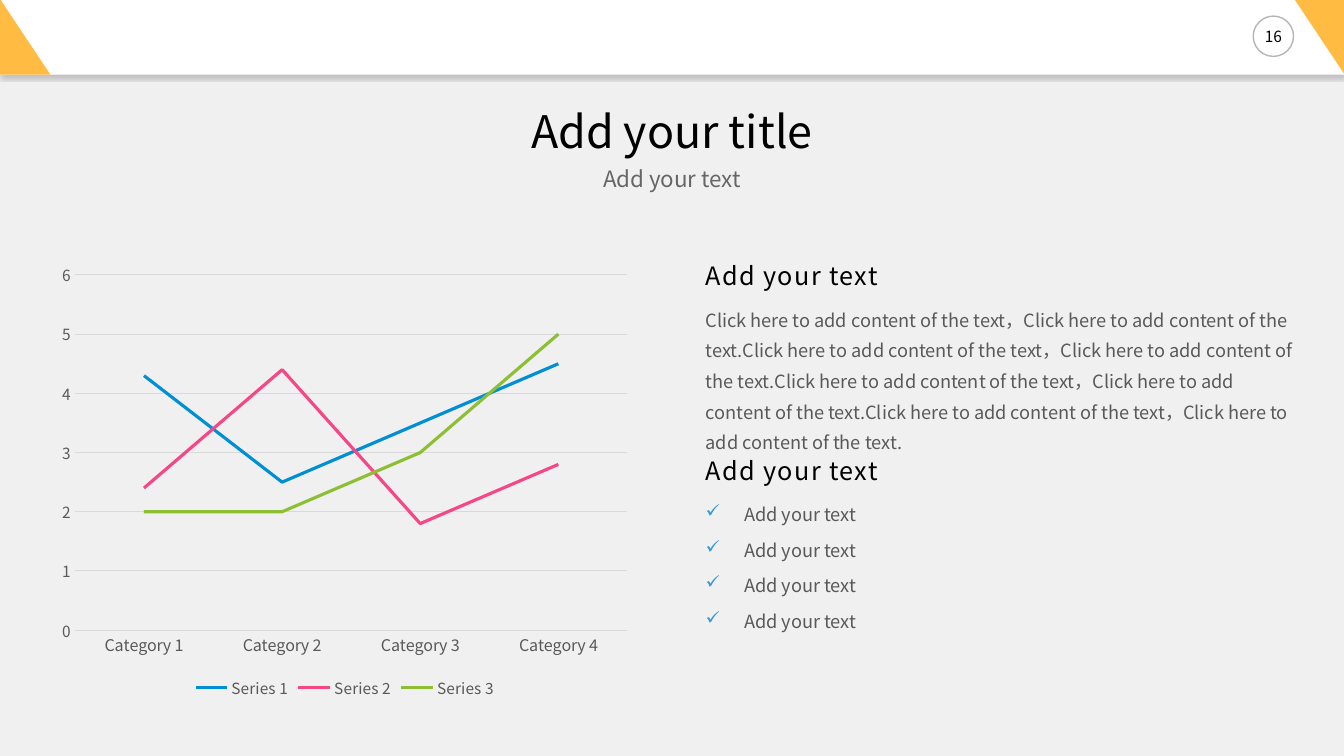
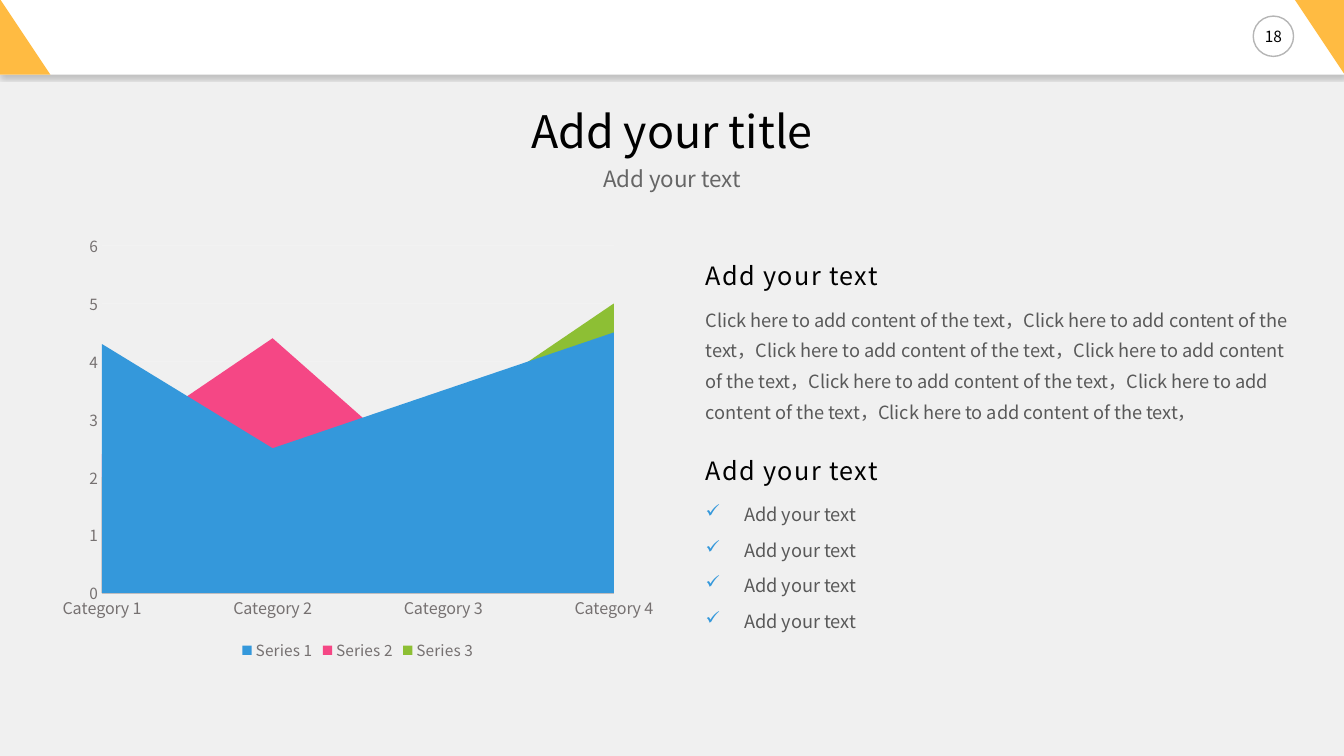
from lxml import etree
from pptx import Presentation
from pptx import util as u
from pptx.chart.data import CategoryChartData
from pptx.dml.color import RGBColor
from pptx.enum import chart as charts, shapes, text
from pptx.oxml import parse_xml
from pptx.oxml.ns import qn

# Content
CATEGORIES = ["Category 1", "Category 2", "Category 3", "Category 4"]
SERIES = [
    ("Series 1", (4.3, 2.5, 3.5, 4.5)),
    ("Series 2", (2.4, 4.4, 1.8, 2.8)),
    ("Series 3", (2, 2, 3, 5)),
]
TITLE = "Add your title"
PLACEHOLDER = "Add your text"
BULLETS = [PLACEHOLDER] * 4
SENTENCE = "Click here to add content of the text"
SLIDES = [
    {
        "number": "16", "kind": charts.XL_CHART_TYPE.LINE,
        "box": (0.5, 2.53, 5.84, 4.44),
        "colors": ("blue_line", "pink", "green"), "label": "body", "grid": "rule",
        "body": f"{SENTENCE}，{SENTENCE}." * 4,
    },
    {
        "number": "18", "kind": charts.XL_CHART_TYPE.AREA,
        "box": (0.5, 2.24, 6.1, 4.36),
        "colors": ("blue", "pink", "green"), "label": "chart_gray", "grid": "faint_rule",
        "body": f"{SENTENCE}，" * 7,
    },
]

# Shared style
COLORS = {
    "background": "F0F0F0", "white": "FFFFFF", "black": "000000", "accent": "FFBB42",
    "ring": "0D0D0D", "body": "595959", "subtitle": "666666", "chart_gray": "767171",
    "rule": "D9D9D9", "faint_rule": "F2F2F2", "blue": "3498DB", "blue_line": "008FD5",
    "pink": "F54785", "green": "8DBF34",
}
FONT = "Noto Sans CJK JP"
WIDTH, HEIGHT = 13.33, 7.5
MARGIN = 0.5
BAND_HEIGHT = 0.75
COLUMN_LEFT = 7
COLUMN_WIDTH = WIDTH - MARGIN - COLUMN_LEFT
CENTER = text.PP_ALIGN.CENTER
STYLES = {
    "title": {"size": 32, "color": "black",
              "paragraph": {"alignment": CENTER, "line_spacing": 0.9}},
    "subtitle": {"size": 16, "color": "subtitle",
                 "paragraph": {"alignment": CENTER, "line_spacing": 0.9}},
    "heading": {"size": 18, "color": "black", "tracking": 100,
                "paragraph": {"line_spacing": 0.9, "space_before": u.Pt(10)}},
    "body": {"size": 13, "color": "body",
             "paragraph": {"line_spacing": 1.4, "space_before": u.Pt(10)}},
    "bullet": {"size": 13, "color": "body", "bullet": "✓",
               "paragraph": {"space_before": u.Pt(10)}},
    "number": {"size": 11, "color": "black", "paragraph": {"alignment": CENTER}},
}
NAMESPACE = 'xmlns:a="http://schemas.openxmlformats.org/drawingml/2006/main"'


def rgb(name):
    return RGBColor.from_string(COLORS[name])


def place(box):
    return [u.Inches(value) for value in box]


def set_attributes(target, values):
    for name, value in values.items():
        setattr(target, name, value)


def add_bullet(paragraph, character):
    properties = paragraph._p.get_or_add_pPr()
    indent = u.Inches(0.38)
    properties.set("marL", str(indent))
    properties.set("indent", str(-indent))
    color = etree.SubElement(properties, qn("a:buClr"))
    etree.SubElement(color, qn("a:srgbClr"), val=COLORS["blue"])
    etree.SubElement(properties, qn("a:buChar"), char=character)


def add_text(slide, box, lines, style_name, anchor=text.MSO_ANCHOR.TOP):
    style = STYLES[style_name]
    frame = slide.shapes.add_textbox(*place(box)).text_frame
    set_attributes(frame, {
        "word_wrap": True, "vertical_anchor": anchor, "margin_left": 0,
        "margin_right": 0, "margin_top": 0, "margin_bottom": 0,
    })
    for index, line in enumerate(lines):
        paragraph = frame.add_paragraph() if index else frame.paragraphs[0]
        set_attributes(paragraph, style["paragraph"])
        if "bullet" in style:
            add_bullet(paragraph, style["bullet"])
        run = paragraph.add_run()
        run.text = line
        set_attributes(run.font, {"size": u.Pt(style["size"]), "name": FONT})
        run.font.color.rgb = rgb(style["color"])
        properties = run._r.get_or_add_rPr()
        etree.SubElement(properties, qn("a:ea"), typeface=FONT)
        if "tracking" in style:
            properties.set("spc", str(style["tracking"]))


def add_plain_shape(slide, kind, box, color):
    shape = slide.shapes.add_shape(kind, *place(box))
    shape.shadow.inherit = False
    shape.fill.solid()
    shape.fill.fore_color.rgb = rgb(color)
    shape.line.fill.background()
    return shape


def add_frame(slide, number):
    """Background, top band, corner triangles and page number."""
    slide.background.fill.solid()
    slide.background.fill.fore_color.rgb = rgb("background")
    kinds = shapes.MSO_SHAPE
    band = add_plain_shape(slide, kinds.RECTANGLE, (0, -0.01, WIDTH, BAND_HEIGHT), "white")
    effects = band._element.spPr.find(qn("a:effectLst"))
    effects.append(parse_xml(
        f'<a:outerShdw {NAMESPACE} blurRad="{u.Pt(3)}" dist="{u.Pt(2)}" dir="5400000"'
        f' algn="t" rotWithShape="0"><a:srgbClr val="{COLORS["black"]}">'
        '<a:alpha val="20000"/></a:srgbClr></a:outerShdw>'))

    number_box = (12.43, 0.16, 0.4, 0.4)
    ring = add_plain_shape(slide, kinds.OVAL, number_box, "white")
    ring.line.color.rgb = rgb("ring")
    ring.line.width = u.Pt(1)
    ring_color = ring.line._ln.find(qn("a:solidFill")).find(qn("a:srgbClr"))
    etree.SubElement(ring_color, qn("a:alpha"), val="30000")

    for left, top, rotation in [(0, -0.01, 0), (WIDTH - MARGIN, -0.02, 180)]:
        corner = add_plain_shape(
            slide, kinds.RIGHT_TRIANGLE, (left, top, MARGIN, BAND_HEIGHT), "accent")
        corner.rotation = rotation
    add_text(slide, number_box, [number], "number", text.MSO_ANCHOR.MIDDLE)


def style_chart_font(font, size, color):
    set_attributes(font, {"size": u.Pt(size), "name": FONT})
    font.color.rgb = rgb(color)


def add_series_chart(slide, content):
    data = CategoryChartData()
    data.categories = CATEGORIES
    for name, values in SERIES:
        data.add_series(name, values)
    chart = slide.shapes.add_chart(content["kind"], *place(content["box"]), data).chart
    set_attributes(chart, {"has_title": False, "has_legend": True})
    style_chart_font(chart.font, 11, content["label"])
    set_attributes(chart.legend, {
        "position": charts.XL_LEGEND_POSITION.BOTTOM, "include_in_layout": False})
    style_chart_font(chart.legend.font, 11, content["label"])

    # Axes
    for axis, size in [(chart.category_axis, 11.5), (chart.value_axis, 11)]:
        set_attributes(axis, {
            "major_tick_mark": charts.XL_TICK_MARK.NONE,
            "minor_tick_mark": charts.XL_TICK_MARK.NONE,
        })
        style_chart_font(axis.tick_labels.font, size, content["label"])
    chart.category_axis.has_major_gridlines = False
    set_attributes(chart.value_axis, {
        "minimum_scale": 0, "maximum_scale": 6, "major_unit": 1,
        "has_major_gridlines": True})
    chart.value_axis.format.line.fill.background()
    rules = [(chart.category_axis, "rule"),
             (chart.value_axis.major_gridlines, content["grid"])]
    for part, color in rules:
        part.format.line.color.rgb = rgb(color)
        part.format.line.width = u.Pt(0.75)

    # Series
    plot = chart.plots[0]
    plot.vary_by_categories = False
    for series, color in zip(plot.series, content["colors"]):
        if content["kind"] == charts.XL_CHART_TYPE.LINE:
            series.smooth = False
            series.marker.style = charts.XL_MARKER_STYLE.NONE
            series.format.line.color.rgb = rgb(color)
            series.format.line.width = u.Pt(2.25)
        else:
            series.format.fill.solid()
            series.format.fill.fore_color.rgb = rgb(color)
            series.format.line.fill.background()


def build_slide(presentation, content):
    slide = presentation.slides.add_slide(presentation.slide_layouts[6])
    add_frame(slide, content["number"])
    add_series_chart(slide, content)
    full_width = WIDTH - 2 * MARGIN
    blocks = [
        (MARGIN, 1.09, full_width, 0.54, [TITLE], "title"),
        (MARGIN, 1.67, full_width, 0.27, [PLACEHOLDER], "subtitle"),
        (COLUMN_LEFT, 2.62, COLUMN_WIDTH, 0.39, [PLACEHOLDER], "heading"),
        (COLUMN_LEFT, 2.98, COLUMN_WIDTH, 1.53, [content["body"]], "body"),
        (COLUMN_LEFT, 4.55, COLUMN_WIDTH, 0.39, [PLACEHOLDER], "heading"),
        (COLUMN_LEFT, 4.99, COLUMN_WIDTH, 1.53, BULLETS, "bullet"),
    ]
    for *box, lines, style_name in blocks:
        add_text(slide, box, lines, style_name)


def main():
    presentation = Presentation()
    presentation.slide_width = u.Inches(WIDTH)
    presentation.slide_height = u.Inches(HEIGHT)
    for content in SLIDES:
        build_slide(presentation, content)
    presentation.save("out.pptx")


if __name__ == "__main__":
    main()
